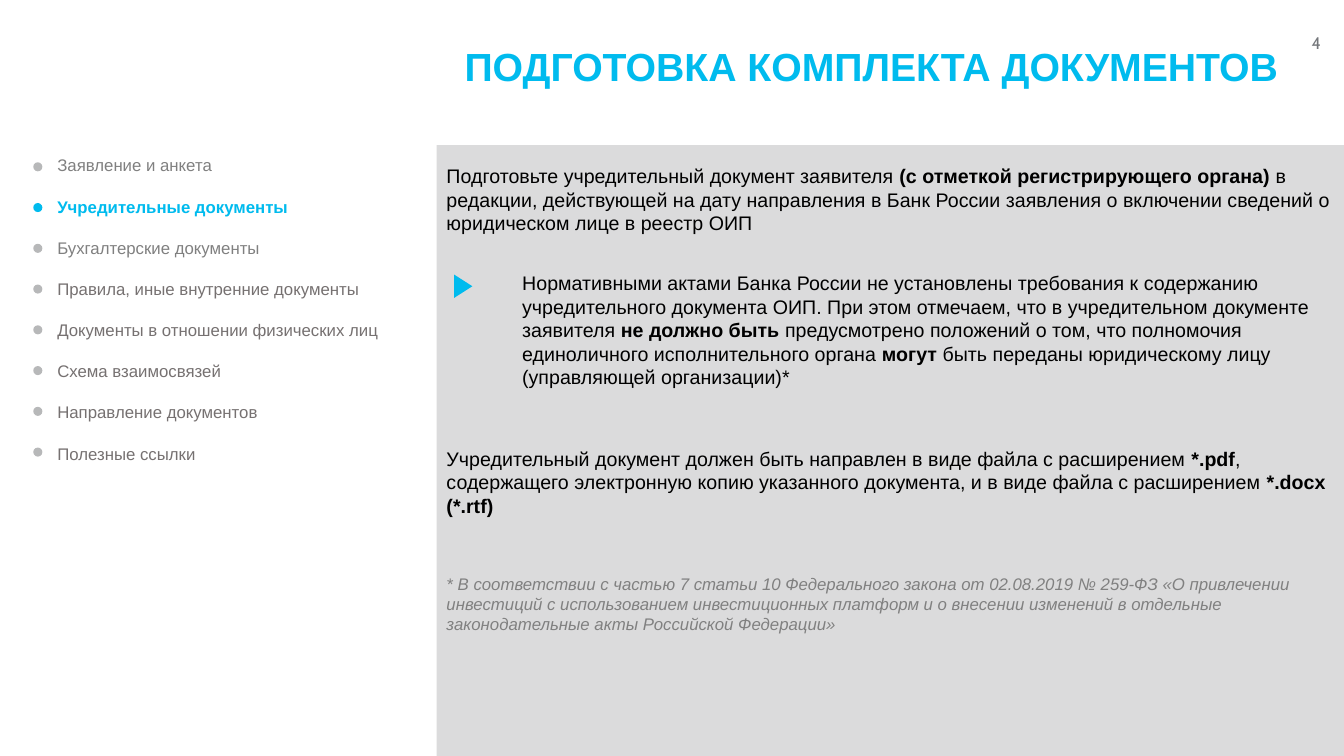
"""Build the slide on preparing the constituent documents."""
from dataclasses import dataclass

from pptx import Presentation
from pptx.dml.color import RGBColor
from pptx.enum.shapes import MSO_SHAPE as Preset
from pptx.enum.text import MSO_ANCHOR as Anchor, PP_ALIGN as Align
from pptx.slide import Slide
from pptx.util import Inches, Pt

ACCENT = "00BBEE"
BLACK = "000000"
GREY = "808080"
DARK_GREY = "767171"
DOT_GREY = "B7B8B9"
PANEL_GREY = "DBDBDC"
PANEL_LEFT, PANEL_WIDTH = 4.33, 9.01
DOT_SIZE, FIRST_DOT, LAST_DOT = 0.09, 1.61, 4.44


@dataclass(frozen=True)
class Frame:
    left: float
    top: float
    width: float
    height: float

    def lengths(self) -> list[int]:
        return [Inches(v) for v in (self.left, self.top, self.width, self.height)]


@dataclass(frozen=True)
class Span:
    text: str
    color: str = BLACK
    size: int = 14
    bold: bool = False
    italic: bool = False
    font: str = "Arial"


@dataclass(frozen=True)
class TextBlock:
    frame: Frame
    paras: list[list[Span]]
    layout: dict
    indent: float = 0
    anchor: Anchor = Anchor.TOP


@dataclass(frozen=True)
class Figure:
    preset: Preset
    frame: Frame
    color: str
    rotation: int = 0


@dataclass(frozen=True)
class MenuItem:
    text: str
    color: str = DARK_GREY
    active: bool = False


def bold(text: str) -> Span:
    return Span(text, bold=True)


def panel_frame(top: float, height: float) -> Frame:
    return Frame(PANEL_LEFT, top, PANEL_WIDTH, height)


def rgb(value: str) -> RGBColor:
    return RGBColor.from_string(value)


def apply(target: object, values: dict) -> None:
    for name, value in values.items():
        setattr(target, name, value)


def draw_figure(page: Slide, figure: Figure) -> None:
    shape = page.shapes.add_shape(figure.preset, *figure.frame.lengths())
    shape.shadow.inherit = False
    shape.rotation = figure.rotation
    shape.fill.solid()
    shape.fill.fore_color.rgb = rgb(figure.color)
    shape.line.fill.background()


def draw_text(page: Slide, block: TextBlock) -> None:
    box = page.shapes.add_textbox(*block.frame.lengths())
    frame = box.text_frame
    apply(frame, {"word_wrap": True, "vertical_anchor": block.anchor})
    for index, spans in enumerate(block.paras):
        para = frame.add_paragraph() if index else frame.paragraphs[0]
        apply(para, block.layout)
        if block.indent:
            para._p.get_or_add_pPr().set("marL", str(Inches(block.indent)))
        for span in spans:
            run = para.add_run()
            run.text = span.text
            apply(run.font, {"name": span.font, "size": Pt(span.size),
                             "bold": span.bold, "italic": span.italic})
            run.font.color.rgb = rgb(span.color)


MENU = [
    MenuItem("Заявление и анкета", GREY),
    MenuItem("Учредительные документы", ACCENT, True),
    MenuItem("Бухгалтерские документы", GREY),
    MenuItem("Правила, иные внутренние документы"),
    MenuItem("Документы в отношении физических лиц"),
    MenuItem("Схема взаимосвязей"),
    MenuItem("Направление документов"),
    MenuItem("Полезные ссылки"),
]
DOT_STEP = (LAST_DOT - FIRST_DOT) / (len(MENU) - 1)

FIGURES = [
    Figure(Preset.RECTANGLE, panel_frame(1.44, 6.06), PANEL_GREY),
    Figure(Preset.ISOSCELES_TRIANGLE, Frame(4.48, 2.75, 0.23, 0.18), ACCENT, 90),
] + [
    Figure(Preset.OVAL, Frame(0.33, FIRST_DOT + row * DOT_STEP, DOT_SIZE, DOT_SIZE),
           ACCENT if item.active else DOT_GREY)
    for row, item in enumerate(MENU)
]

TEXTS = [
    TextBlock(Frame(10.78, 0.28, 2.42, 0.3),
              [[Span("4", "74777B", 12, font="Cabin")]], {"alignment": Align.RIGHT}),
    TextBlock(Frame(4.51, -0.04, 8.8, 1.45),
              [[Span("ПОДГОТОВКА КОМПЛЕКТА ДОКУМЕНТОВ", ACCENT, 28, True)]],
              {"line_spacing": 0.9}, anchor=Anchor.MIDDLE),
    TextBlock(panel_frame(1.58, 0.81), [[
        Span("Подготовьте учредительный документ заявителя "),
        bold("(с отметкой регистрирующего органа) "),
        Span("в редакции, действующей на дату направления в Банк России заявления "
             "о включении сведений о юридическом лице в реестр ОИП"),
    ]], {}),
    TextBlock(Frame(4.69, 2.64, 8.65, 1.28), [[
        Span("Нормативными актами Банка России не установлены требования к содержанию "
             "учредительного документа ОИП. При этом отмечаем, что в учредительном "
             "документе заявителя "),
        bold("не должно быть "),
        Span("предусмотрено положений о том, что полномочия единоличного "
             "исполнительного органа "),
        bold("могут"),
        Span(" быть переданы юридическому лицу (управляющей организации)*"),
    ]], {}, indent=0.39),
    TextBlock(panel_frame(4.38, 0.81), [[
        Span("Учредительный документ должен быть направлен в виде файла с расширением "),
        bold("*.pdf"),
        Span(", содержащего электронную копию указанного документа, "
             "и в виде файла с расширением "),
        bold("*.docx (*.rtf)"),
    ]], {}),
    TextBlock(panel_frame(5.64, 0.71), [[
        Span("* В соответствии с частью 7 статьи 10 Федерального закона от 02.08.2019 "
             "№ 259-ФЗ «О привлечении инвестиций с использованием инвестиционных "
             "платформ и о внесении изменений в отдельные законодательные акты "
             "Российской Федерации»", GREY, 12, italic=True),
    ]], {}),
    TextBlock(Frame(0.47, 1.49, 3.69, 3.19),
              [[Span(item.text, item.color, 12, item.active)] for item in MENU],
              {"space_after": Pt(15)}),
]


def main() -> None:
    deck = Presentation()
    apply(deck, {"slide_width": Inches(13.33), "slide_height": Inches(7.5)})
    page = deck.slides.add_slide(deck.slide_layouts[6])
    for figure in FIGURES:
        draw_figure(page, figure)
    for block in TEXTS:
        draw_text(page, block)
    deck.save("out.pptx")


if __name__ == "__main__":
    main()
